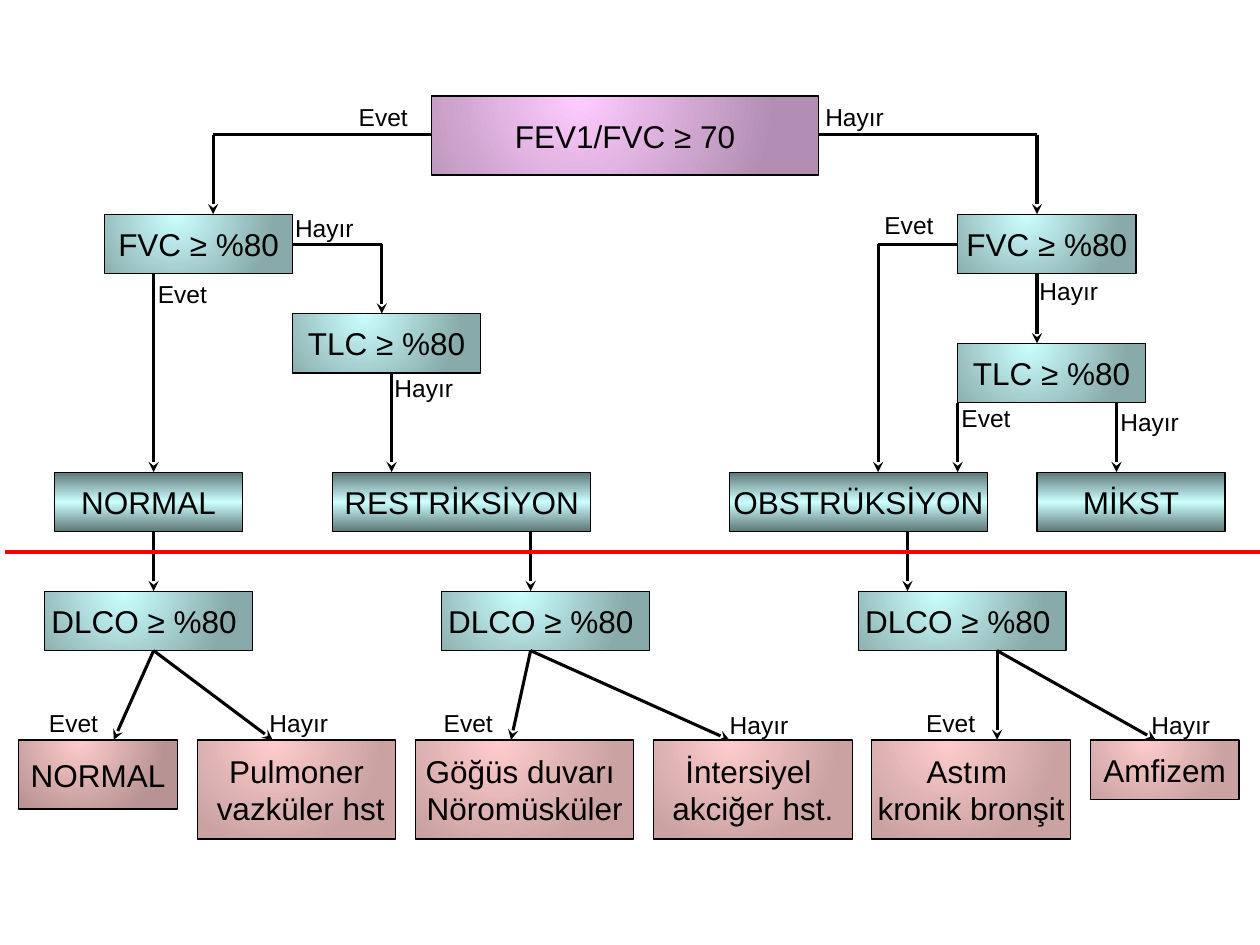
import pptx
import pptx.dml.color
import pptx.enum.shapes
import pptx.enum.text
import pptx.oxml
import pptx.oxml.ns
import pptx.util
from dataclasses import dataclass

Pt = pptx.util.Pt
NS = pptx.oxml.ns.nsdecls("a")
RADIAL = ('<a:path path="circle"><a:fillToRect l="38000" t="-20000" '
          'r="62000" b="120000"/></a:path>')
BANDED = '<a:lin ang="16200000" scaled="0"/>'


@dataclass(frozen=True)
class Theme:
    font: str = "Arial"
    ink: str = "000000"
    rule: str = "FF0000"
    big: float = 18
    small: float = 14
    edge: float = 0.75
    arrow: float = 1.75
    bold: float = 2.5
    root: tuple = ("FFCCFF", "B28EB2")
    test: tuple = ("CCFFFF", "88AAAA")
    result: tuple = ("5E7676", "CCFFFF", "5E7676")
    cause: tuple = ("FFCCCC", "CAA2A2")
    plain: tuple = ("FFCCCC", "B89393")


theme = Theme()


def write(shape, text, size=theme.big, align="CENTER", anchor="MIDDLE", wrap=False):
    frame = shape.text_frame
    frame.word_wrap = wrap
    frame.vertical_anchor = pptx.enum.text.MSO_ANCHOR[anchor]
    frame.margin_left = frame.margin_right = Pt(3.6)
    frame.margin_top = frame.margin_bottom = Pt(3.6)
    for i, line in enumerate(text.split("\n")):
        para = frame.add_paragraph() if i else frame.paragraphs[0]
        para.alignment = pptx.enum.text.PP_ALIGN[align]
        run = para.add_run()
        run.text = line
        run.font.name = theme.font
        run.font.size = Pt(size)
        run.font.color.rgb = pptx.dml.color.RGBColor.from_string(theme.ink)


def link(start, end, color=theme.ink, width=theme.arrow, head=False):
    """Draw a straight line, with an arrowhead at its end if head is set."""
    line = slide.shapes.add_connector(
        pptx.enum.shapes.MSO_CONNECTOR.STRAIGHT,
        *[Pt(v) for v in (*start, *end)])
    line.line.color.rgb = pptx.dml.color.RGBColor.from_string(color)
    line.line.width = Pt(width)
    if head:
        line.line._get_or_add_ln().append(
            pptx.oxml.parse_xml(f'<a:tailEnd {NS} type="stealth"/>'))
    line._element.spPr.append(pptx.oxml.parse_xml(f"<a:effectLst {NS}/>"))


deck = pptx.Presentation()
deck.slide_width, deck.slide_height = Pt(720), Pt(540)
slide = deck.slides.add_slide(deck.slide_layouts[6])

# Levels of the tree, top edges
FVC, TLC, MIXED, RESULT, DLCO, CAUSE = 122.4, 179.2, 196.2, 269.8, 337.8, 422.8
HIGH, TALL = 34, 56.6
WIDE, BROAD, LONG = 107.4, 118.8, 147.6

boxes = [
    ("FEV1/FVC ≥ 70", 246.6, 54.8, 221.2, 45.2, theme.root),
    ("FVC ≥ %80", 59.8, FVC, WIDE, HIGH, theme.test),
    ("FVC ≥ %80", 547.2, FVC, 102, HIGH, theme.test),
    ("TLC ≥ %80", 167.2, TLC, WIDE, HIGH, theme.test),
    ("TLC ≥ %80", 547.2, MIXED, WIDE, HIGH, theme.test),
    ("NORMAL", 31.2, RESULT, WIDE, HIGH, theme.result),
    ("RESTRİKSİYON", 190, RESULT, LONG, HIGH, theme.result),
    ("OBSTRÜKSİYON", 416.8, RESULT, LONG, HIGH, theme.result),
    ("MİKST", 592.6, RESULT, WIDE, HIGH, theme.result),
    ("DLCO ≥ %80 ", 25.4, DLCO, BROAD, HIGH, theme.test),
    ("DLCO ≥ %80 ", 252.2, DLCO, BROAD, HIGH, theme.test),
    ("DLCO ≥ %80 ", 490.4, DLCO, BROAD, HIGH, theme.test),
    ("NORMAL", 10.6, CAUSE, 90.8, 39.6, theme.plain),
    ("Pulmoner\n vazküler hst", 112.8, CAUSE, 113.2, TALL, theme.cause),
    ("Göğüs duvarı \nNöromüsküler", 237.4, CAUSE, 124.8, TALL, theme.cause),
    ("İntersiyel \nakciğer hst.", 373.4, CAUSE, 113.6, TALL, theme.cause),
    ("Astım \nkronik bronşit", 498.2, CAUSE, 113.6, TALL, theme.cause),
    ("Amfizem", 623, CAUSE, 85, HIGH, theme.cause),
]
for text, x, y, w, h, colors in boxes:
    box = slide.shapes.add_shape(pptx.enum.shapes.MSO_SHAPE.RECTANGLE,
                                 Pt(x), Pt(y), Pt(w), Pt(h))
    box.shadow.inherit = False
    box.line.color.rgb = pptx.dml.color.RGBColor.from_string(theme.ink)
    box.line.width = Pt(theme.edge)
    box.fill.background()
    stops = "".join(
        f'<a:gs pos="{100000 * i // (len(colors) - 1)}"><a:srgbClr val="{c}"/></a:gs>'
        for i, c in enumerate(colors))
    shade = BANDED if colors == theme.result else RADIAL
    props = box._element.spPr
    props.replace(props.find(pptx.oxml.ns.qn("a:noFill")), pptx.oxml.parse_xml(
        f'<a:gradFill {NS} rotWithShape="1"><a:gsLst>{stops}</a:gsLst>{shade}</a:gradFill>'))
    write(box, text)

# Each route ends in an arrowhead
TRUNK, SIDE = 77, 139.6
routes = [
    [(467.8, TRUNK), (592.6, TRUNK), (592.6, FVC)],
    [(246.6, TRUNK), (121.8, TRUNK), (121.8, FVC)],
    [(167.2, SIDE), (218.2, SIDE), (218.2, TLC)],
    [(547.2, SIDE), (501.8, SIDE), (501.8, RESULT)],
    [(87.8, FVC + HIGH), (87.8, RESULT)],
    [(223.8, TLC + HIGH), (223.8, RESULT)],
    [(592.6, FVC + HIGH), (592.6, MIXED)],
    [(547.2, MIXED + HIGH), (547.2, RESULT)],
    [(638, MIXED + HIGH), (638, RESULT)],
]
routes += [[(x, RESULT + HIGH), (x, DLCO)] for x in (87.8, 303.2, 518.6)]
forks = [(87.8, 65, 155.8), (303.2, 292, 416.8), (569.8, 569.8, 660.4)]
for x, *ends in forks:
    routes += [[(x, DLCO + HIGH), (end, CAUSE)] for end in ends]
for route in routes:
    for i in range(1, len(route)):
        link(route[i - 1], route[i], head=i == len(route) - 1)

labels = {
    "Evet": (56.8, [(201.4, 54.8), (501.8, 116.4), (86.6, 156), (24.4, 401),
                    (250, 401), (525.6, 401), (545.8, 226.6)]),
    "Hayır": (62.6, [(468, 54.8), (165, 118), (221.8, 209.8), (150.4, 401),
                     (413.4, 402.2), (654.4, 402.2), (636.6, 228.8), (590.4, 154)]),
}
for text, (w, spots) in labels.items():
    for x, y in spots:
        label = slide.shapes.add_textbox(Pt(x), Pt(y), Pt(w), Pt(23))
        write(label, text, size=theme.small, align="LEFT", anchor="TOP", wrap=True)

link((3, 315.4), (723, 315.4), color=theme.rule, width=theme.bold)

deck.save("out.pptx")
